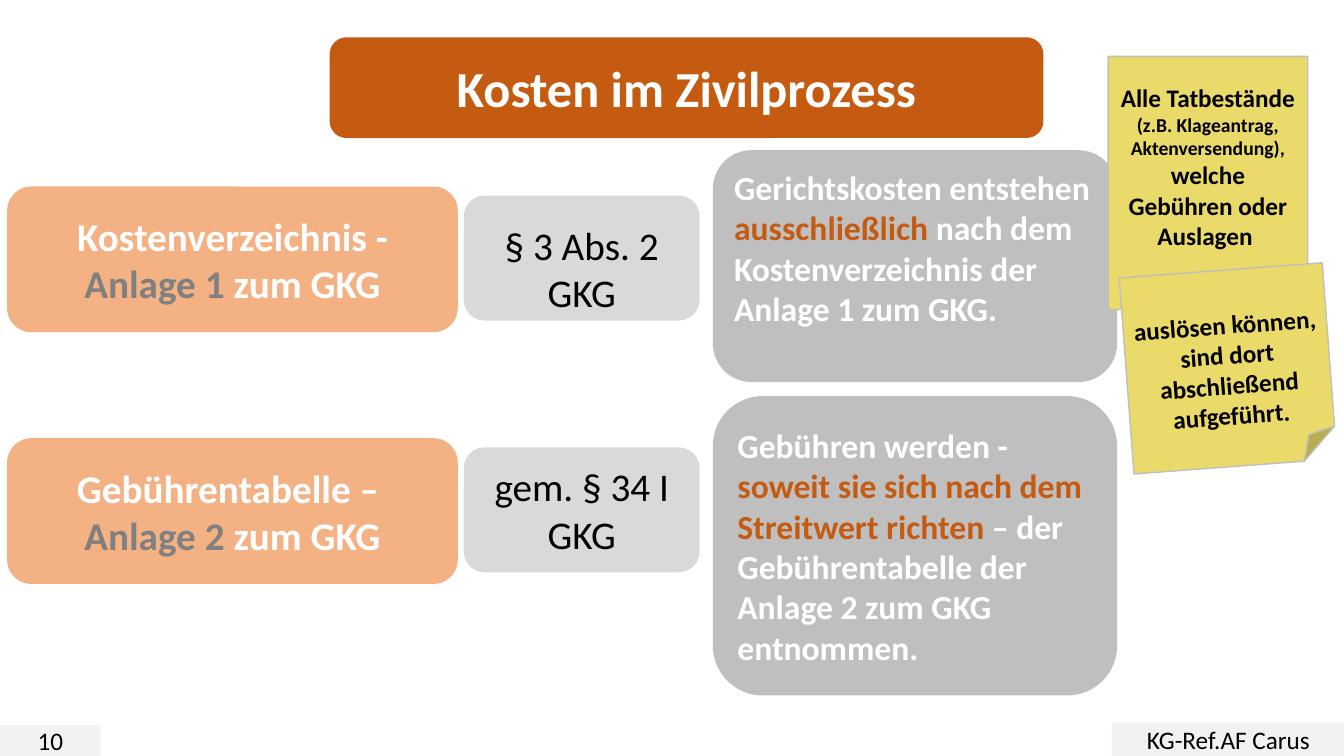
from dataclasses import dataclass
from pptx import Presentation
from pptx.dml.color import RGBColor
from pptx.enum.shapes import MSO_SHAPE as Shape
from pptx.enum.text import MSO_ANCHOR as Anchor, PP_ALIGN as Align
from pptx.util import Inches, Pt


@dataclass(frozen=True)
class Theme:
    font: str = "Calibri"
    rust: str = "C55A11"
    peach: str = "F4B183"
    gray: str = "BFBFBF"
    light: str = "D9D9D9"
    pale: str = "F2F2F2"
    yellow: str = "E9DA69"
    dim: str = "808080"
    white: str = "FFFFFF"
    black: str = "000000"
    title: int = 36
    label: int = 28
    rule: int = 24
    note: int = 18
    small: int = 14


T = Theme()
prs = Presentation()
prs.slide_width, prs.slide_height = Inches(13.33), Inches(7.5)
COL, ROW = prs.slide_width / 100, prs.slide_height / 100
s = prs.slides.add_slide(prs.slide_layouts[6])


def add_box(kind, x, y, w, h, fill, paragraphs, size, color,
            bold=True, align=Align.CENTER):
    """Place a box on the 100 x 100 grid; a run is (text, optional overrides)."""
    sp = s.shapes.add_shape(kind, *map(round, (x * COL, y * ROW, w * COL, h * ROW)))
    sp.shadow.inherit = False
    sp.fill.solid()
    sp.fill.fore_color.rgb = RGBColor.from_string(fill)
    sp.line.fill.background()
    tf = sp.text_frame
    tf.word_wrap = True
    tf.vertical_anchor = Anchor.MIDDLE
    for i, runs in enumerate(paragraphs):
        p = tf.add_paragraph() if i else tf.paragraphs[0]
        p.alignment = align
        for text, *change in runs:
            style = {"size": size, "color": color, **(change[0] if change else {})}
            r = p.add_run()
            r.text = text
            r.font.name, r.font.bold = T.font, bold
            r.font.size = Pt(style["size"])
            r.font.color.rgb = RGBColor.from_string(style["color"])
    return sp


rust, dim, small = {"color": T.rust}, {"color": T.dim}, {"size": T.small}

# Right column: the rules
RULE_X, RULE_W = 53.04, 30.08
add_box(Shape.ROUNDED_RECTANGLE, RULE_X, 52.4, RULE_W, 39.6, T.gray,
        [[("Gebühren werden - ",),
          ("soweit sie sich nach dem Streitwert richten ", rust),
          ("– der Gebührentabelle der Anlage 2 zum GKG entnommen.",)]],
        T.rule, T.white, align=Align.LEFT)
add_box(Shape.ROUNDED_RECTANGLE, 24.53, 4.93, 53.11, 13.33, T.rust,
        [[("Kosten im Zivilprozess",)]], T.title, T.white)
court_costs = add_box(
    Shape.ROUNDED_RECTANGLE, RULE_X, 19.87, RULE_W, 30.67, T.gray,
    [[("Gerichtskosten entstehen",)],
     [("ausschließlich ", rust), ("nach dem",)],
     [("Kostenverzeichnis der Anlage 1 zum GKG.",)]],
    T.rule, T.white, align=Align.LEFT)
court_costs.text_frame.margin_bottom = Inches(0.42)

# Footer
for x, y, w, text in [(82.73, 95.6, 17.33, "KG-Ref.AF Carus"), (0, 95.87, 7.5, "10")]:
    add_box(Shape.RECTANGLE, x, y, w, 100 - y, T.pale, [[(text,)]],
            T.note, T.black, bold=False)

# Left columns: schedule and its legal basis, one row each
ROW_STEP = 33.3
rows = [
    ([[("Kostenverzeichnis - ",), ("Anlage 1 ", dim), ("zum GKG",)]],
     "§ 3 Abs. 2 GKG", 0.25),
    ([[("Gebührentabelle – ",)], [("Anlage 2 ", dim), ("zum GKG",)]],
     "gem. § 34 I GKG", 0.05),
]
for i, (schedule, basis, top) in enumerate(rows):
    add_box(Shape.ROUNDED_RECTANGLE, 0.53, 24.67 + i * ROW_STEP, 33.53, 19.27,
            T.peach, schedule, T.label, T.white)
    sp = add_box(Shape.ROUNDED_RECTANGLE, 34.51, 25.87 + i * ROW_STEP, 17.55, 16.53,
                 T.light, [[(basis,)]], T.label, T.black, bold=False)
    sp.text_frame.margin_top = Inches(top)

# Sticky notes
notes = [
    (82.45, 7.47, 14.85, 33.47, 0, 0.05,
     [[("Alle Tatbestände ",), ("(z.B. Klageantrag, Aktenversendung),", small)],
      [("welche Gebühren oder Auslagen ",)]]),
    (83.8, 35.73, 15.15, 26, 355.7, 0.4,
     [[("auslösen können, sind dort abschließend aufgeführt.",)]]),
]
for x, y, w, h, angle, top, paragraphs in notes:
    sp = add_box(Shape.FOLDED_CORNER, x, y, w, h, T.yellow, paragraphs, T.note, T.black)
    sp.line.color.rgb = RGBColor.from_string(T.gray)
    sp.line.width = Pt(1)
    sp.rotation = angle
    sp.text_frame.margin_top = Inches(top)

prs.save("out.pptx")
